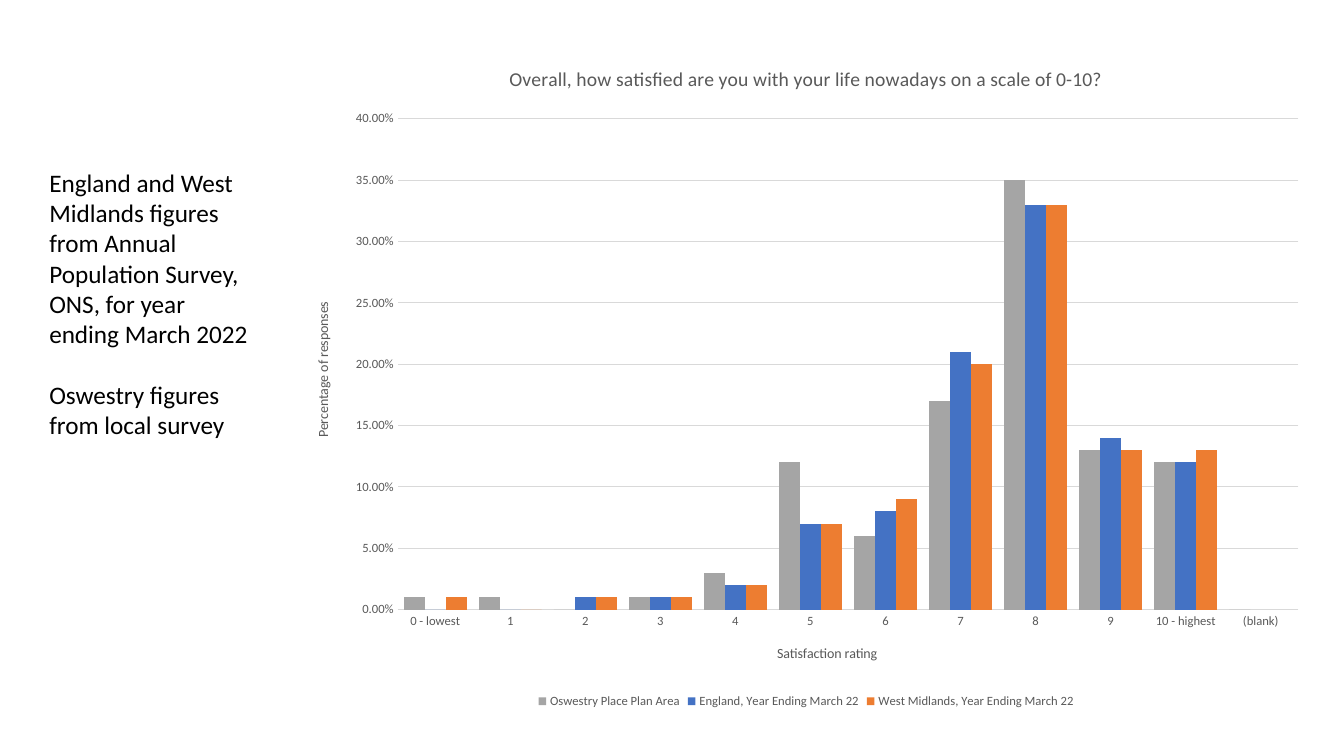
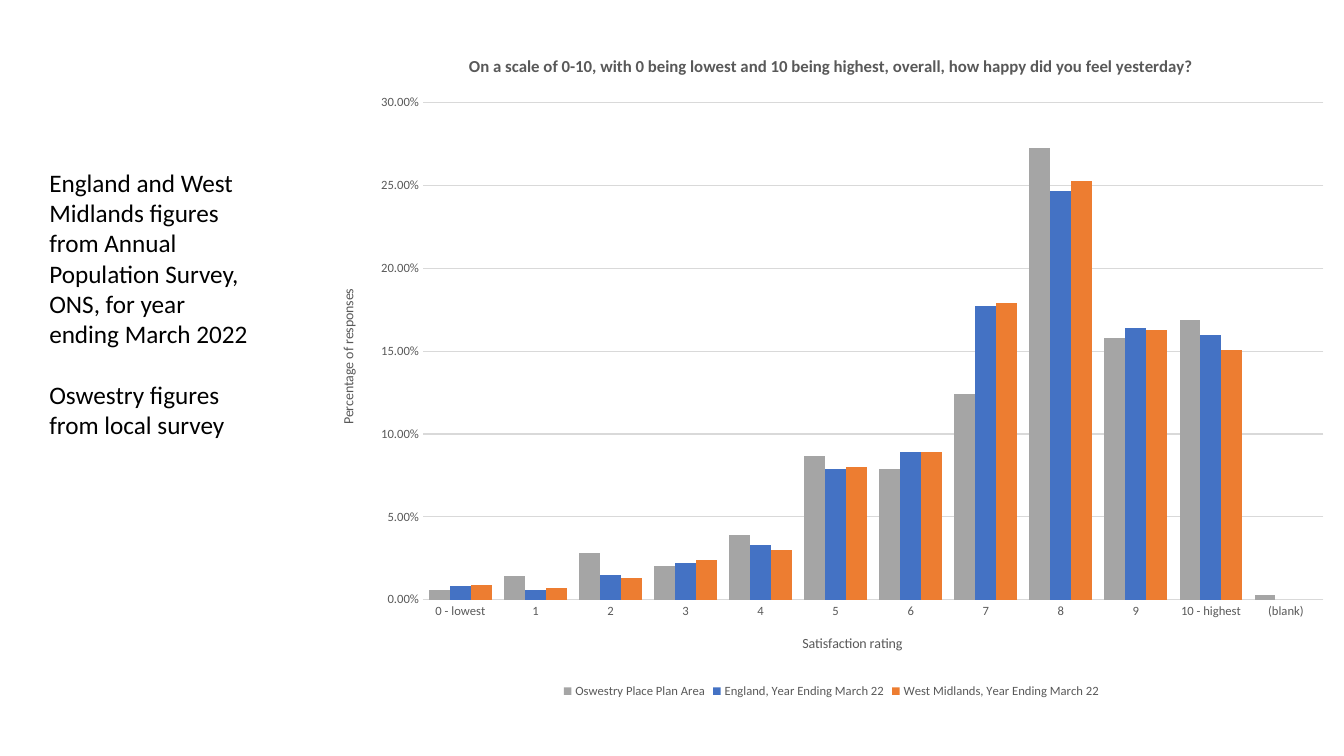
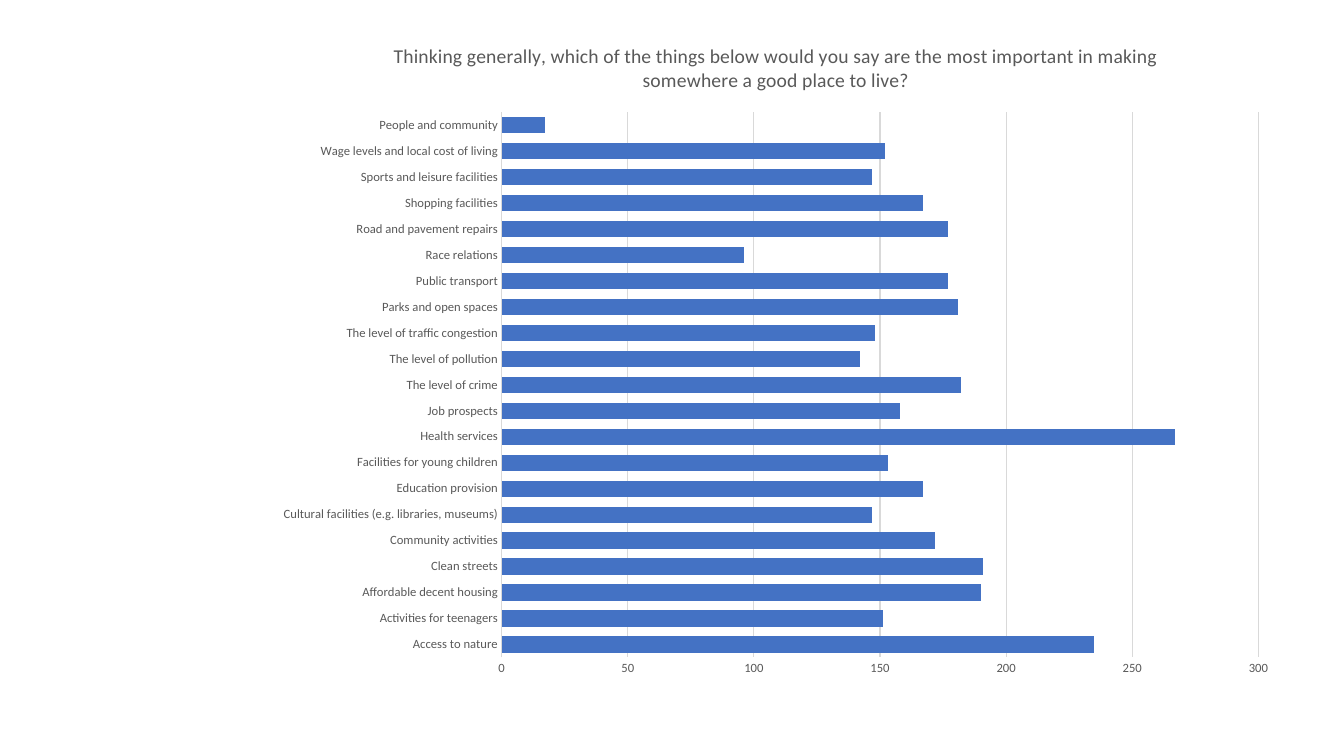
import pptx
import pptx.chart.data
import pptx.dml.color
import pptx.enum.chart
import pptx.enum.text
import pptx.util

Inches = pptx.util.Inches
Pt = pptx.util.Pt

COLOURS = {
    "text": "000000",
    "label": "595959",
    "grid": "D9D9D9",
    "grey": "A5A5A5",
    "blue": "4472C4",
    "orange": "ED7D31",
}
FONT = "Calibri"
CHART_SIZE = (10.17, 6.64)
RATINGS = ["0 - lowest", *map(str, range(1, 10)), "10 - highest", "(blank)"]
AREAS = [
    ("Oswestry Place Plan Area", "grey"),
    ("England, Year Ending March 22", "blue"),
    ("West Midlands, Year Ending March 22", "orange"),
]
SOURCES = [
    "England and West Midlands figures from Annual Population Survey, ONS, "
    "for year ending March 2022",
    "Oswestry figures from local survey",
]

SATISFIED = [
    [0.01, 0.01, 0, 0.01, 0.03, 0.12, 0.06, 0.17, 0.35, 0.13, 0.12, 0],
    [0, 0, 0.01, 0.01, 0.02, 0.07, 0.08, 0.21, 0.33, 0.14, 0.12, None],
    [0.01, 0, 0.01, 0.01, 0.02, 0.07, 0.09, 0.2, 0.33, 0.13, 0.13, None],
]
HAPPY = [
    [0.006, 0.014, 0.028, 0.02, 0.039, 0.087, 0.079, 0.124, 0.273, 0.158, 0.169, 0.003],
    [0.008, 0.006, 0.015, 0.022, 0.033, 0.079, 0.089, 0.177, 0.247, 0.164, 0.16, None],
    [0.009, 0.007, 0.013, 0.024, 0.03, 0.08, 0.089, 0.179, 0.253, 0.163, 0.151, None],
]
PRIORITIES = {
    "Access to nature": 235,
    "Activities for teenagers": 151,
    "Affordable decent housing": 190,
    "Clean streets": 191,
    "Community activities": 172,
    "Cultural facilities (e.g. libraries, museums)": 147,
    "Education provision": 167,
    "Facilities for young children": 153,
    "Health services": 267,
    "Job prospects": 158,
    "The level of crime": 182,
    "The level of pollution": 142,
    "The level of traffic congestion": 148,
    "Parks and open spaces": 181,
    "Public transport": 177,
    "Race relations": 96,
    "Road and pavement repairs": 177,
    "Shopping facilities": 167,
    "Sports and leisure facilities": 147,
    "Wage levels and local cost of living": 152,
    "People and community": 17,
}


class SurveyDeck:
    def __init__(self):
        self.deck = pptx.Presentation()
        self.deck.slide_width = Inches(13.33)
        self.deck.slide_height = Inches(7.5)
        self.page = None

    def add_page(self):
        self.page = self.deck.slides.add_slide(self.deck.slide_layouts[6])

    def colour(self, name):
        return pptx.dml.color.RGBColor.from_string(COLOURS[name])

    def style_font(self, font, size, colour="label", bold=False):
        font.name = FONT
        font.size = Pt(size)
        font.bold = bold
        font.color.rgb = self.colour(colour)

    def style_line(self, line):
        line.color.rgb = self.colour("grid")
        line.width = Pt(0.75)

    def title(self, owner, text, size, bold=False):
        frame = owner.text_frame
        frame.text = text
        self.style_font(frame.paragraphs[0].runs[0].font, size, bold=bold)
        return frame

    def source_note(self):
        box = self.page.shapes.add_textbox(
            Inches(0.39), Inches(1.61), Inches(2.29), Inches(2.83))
        frame = box.text_frame
        frame.word_wrap = True
        frame.auto_size = pptx.enum.text.MSO_AUTO_SIZE.SHAPE_TO_FIT_TEXT
        frame.text = "\n".join(SOURCES)
        for para in frame.paragraphs:
            self.style_font(para.runs[0].font, 18, "text")
        frame.paragraphs[0].space_after = Pt(21.6)

    def chart(self, kind, left, top, title, categories, series, maximum, step,
              number_format="General", gap=59, title_size=14, bold=False):
        data = pptx.chart.data.CategoryChartData(number_format=number_format)
        data.categories = categories
        for name, _, values in series:
            data.add_series(name, values)
        width, height = CHART_SIZE
        chart = self.page.shapes.add_chart(
            kind, Inches(left), Inches(top), Inches(width), Inches(height), data).chart
        self.style_font(chart.font, 10, "text")
        chart.has_title = True
        self.title(chart.chart_title, title, title_size, bold)
        chart.chart_title.include_in_layout = False
        chart.has_legend = False

        plot = chart.plots[0]
        plot.gap_width = gap
        plot.overlap = 0
        plot.vary_by_categories = False
        for bars, (_, colour, _) in zip(plot.series, series):
            bars.format.fill.solid()
            bars.format.fill.fore_color.rgb = self.colour(colour)
            bars.invert_if_negative = False

        for axis in (chart.category_axis, chart.value_axis):
            axis.major_tick_mark = pptx.enum.chart.XL_TICK_MARK.NONE
            axis.minor_tick_mark = pptx.enum.chart.XL_TICK_MARK.NONE
            self.style_font(axis.tick_labels.font, 9)
        self.style_line(chart.category_axis.format.line)
        value_axis = chart.value_axis
        value_axis.format.line.fill.background()
        value_axis.has_major_gridlines = True
        self.style_line(value_axis.major_gridlines.format.line)
        value_axis.minimum_scale = 0
        value_axis.maximum_scale = maximum
        value_axis.major_unit = step
        value_axis.tick_labels.number_format = number_format
        value_axis.tick_labels.number_format_is_linked = False
        return chart

    def rating_page(self, left, top, title, values, maximum, **title_style):
        self.add_page()
        series = [(*area, row) for area, row in zip(AREAS, values)]
        chart = self.chart(
            pptx.enum.chart.XL_CHART_TYPE.COLUMN_CLUSTERED, left, top, title,
            RATINGS, series, maximum, 0.05, "0.00%", **title_style)
        self.title(chart.category_axis.axis_title, "Satisfaction rating", 10)
        frame = self.title(chart.value_axis.axis_title, "Percentage of responses", 10)
        frame._txBody.bodyPr.set("rot", "-5400000")
        frame._txBody.bodyPr.set("vert", "horz")
        chart.has_legend = True
        chart.legend.position = pptx.enum.chart.XL_LEGEND_POSITION.BOTTOM
        chart.legend.include_in_layout = False
        self.style_font(chart.legend.font, 9)
        self.source_note()

    def priority_page(self):
        self.add_page()
        self.chart(
            pptx.enum.chart.XL_CHART_TYPE.BAR_CLUSTERED, 2.61, 0.2,
            "Thinking generally, which of the things below would you say are "
            "the most important in making somewhere a good place to live?",
            list(PRIORITIES), [("Series 1", "blue", list(PRIORITIES.values()))],
            300, 50, gap=60)


def main():
    survey = SurveyDeck()
    survey.rating_page(
        2.91, 0.43,
        "Overall, how satisfied are you with your life nowadays on a scale of 0-10?",
        SATISFIED, 0.4)
    survey.rating_page(
        3.16, 0.33,
        "On a scale of 0-10, with 0 being lowest and 10 being highest, overall, "
        "how happy did you feel yesterday?",
        HAPPY, 0.3, title_size=12, bold=True)
    survey.priority_page()
    survey.deck.save("out.pptx")


if __name__ == "__main__":
    main()
